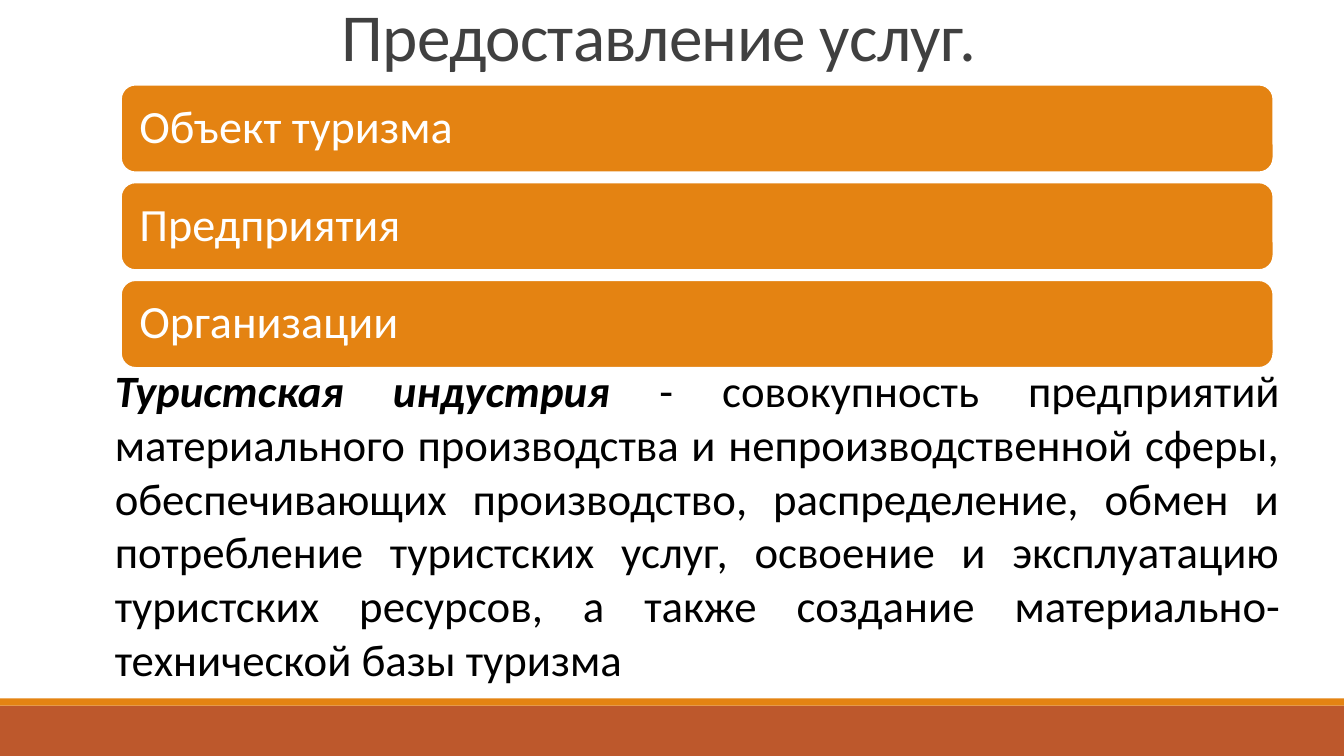
from typing import NamedTuple

from pptx import Presentation
from pptx.dml.color import RGBColor
from pptx.enum.shapes import MSO_SHAPE as Preset
from pptx.enum.text import MSO_ANCHOR as Anchor, MSO_AUTO_SIZE as AutoSize, PP_ALIGN as Align
from pptx.shapes.autoshape import Shape
from pptx.slide import Slide
from pptx.text.text import Font
from pptx.util import Emu, Pt

EMU_PER_PX = 9144
ORANGE, RUST, WHITE = "E48312", "BD582C", "FFFFFF"
SERVICE_TOP, SERVICE_PITCH = 84, 97


class Box(NamedTuple):
    """Position and size in px, 100 px to the inch."""

    left: int
    top: int
    width: int
    height: int


class Band(NamedTuple):
    """A plain strip along the foot of the slide."""

    box: Box
    fill: str


BANDS = [Band(Box(0, 700, 1333, 50), RUST), Band(Box(0, 693, 1333, 7), ORANGE)]
SERVICES = ["Объект туризма", "Предприятия", "Организации"]
TERM = "Туристская индустрия "
DEFINITION = (
    "- совокупность предприятий материального производства и непроизводственной сферы, "
    "обеспечивающих производство, распределение, обмен и потребление туристских услуг, "
    "освоение и эксплуатацию туристских ресурсов, а также создание "
    "материально-технической базы туризма"
)


def px(length: int) -> Emu:
    """Turn px into EMU."""
    return Emu(length * EMU_PER_PX)


def colour(code: str) -> RGBColor:
    """Turn a hex string into a colour."""
    return RGBColor.from_string(code)


def style_font(font: Font, size: int, code: str) -> None:
    """Set the typeface, size and colour of a font."""
    font.name = "Calibri"
    font.size = Pt(size)
    font.color.rgb = colour(code)


def add_filled(slide: Slide, preset: Preset, box: Box, fill: str) -> Shape:
    """Add a flat, shadowless shape without an outline."""
    panel = slide.shapes.add_shape(preset, *map(px, box))
    panel.shadow.inherit = False
    panel.fill.solid()
    panel.fill.fore_color.rgb = colour(fill)
    panel.line.fill.background()
    return panel


def set_title(slide: Slide, heading: str, box: Box) -> None:
    """Move, fill and format the title placeholder."""
    title = slide.shapes.title
    title.left, title.top, title.width, title.height = map(px, box)
    frame = title.text_frame
    frame.text = heading
    frame.auto_size = AutoSize.NONE
    frame.vertical_anchor = Anchor.BOTTOM
    line = frame.paragraphs[0]
    line.alignment = Align.CENTER
    line.line_spacing = 0.85
    font = line.runs[0].font
    style_font(font, 48, "404040")
    line.runs[0]._r.get_or_add_rPr().set("spc", "-50")


def add_service(slide: Slide, name: str, box: Box) -> None:
    """Add one rounded bar with its label."""
    bar = add_filled(slide, Preset.ROUNDED_RECTANGLE, box, ORANGE)
    bar.line.color.rgb = colour(WHITE)
    bar.line.width = Pt(1.25)
    frame = bar.text_frame
    frame.text = name
    frame.word_wrap = True
    frame.vertical_anchor = Anchor.MIDDLE
    frame.margin_left = frame.margin_right = px(14)
    frame.margin_top = frame.margin_bottom = px(14)
    label = frame.paragraphs[0]
    label.alignment = Align.LEFT
    label.line_spacing = 0.9
    style_font(label.runs[0].font, 33, WHITE)


def add_definition(slide: Slide, box: Box) -> None:
    """Add the justified definition with its emphasised term."""
    frame = slide.shapes.add_textbox(*map(px, box)).text_frame
    frame.word_wrap = True
    frame.auto_size = AutoSize.SHAPE_TO_FIT_TEXT
    sentence = frame.paragraphs[0]
    sentence.alignment = Align.JUSTIFY
    for wording, emphasised in ((TERM, True), (DEFINITION, False)):
        run = sentence.add_run()
        run.text = wording
        style_font(run.font, 32, "000000")
        run.font.bold = run.font.italic = emphasised


def main() -> None:
    """Build and save the slide."""
    deck = Presentation()
    deck.slide_width, deck.slide_height = px(1333), px(750)
    slide = deck.slides.add_slide(deck.slide_layouts.get_by_name("Title Only"))
    for band in BANDS:
        add_filled(slide, Preset.RECTANGLE, band.box, band.fill)
    set_title(slide, "Предоставление услуг.", Box(104, -79, 1100, 159))
    for row, name in enumerate(SERVICES):
        add_service(slide, name, Box(120, SERVICE_TOP + row * SERVICE_PITCH, 1143, 87))
    add_definition(slide, Box(104, 355, 1176, 333))
    deck.save("out.pptx")


if __name__ == "__main__":
    main()
